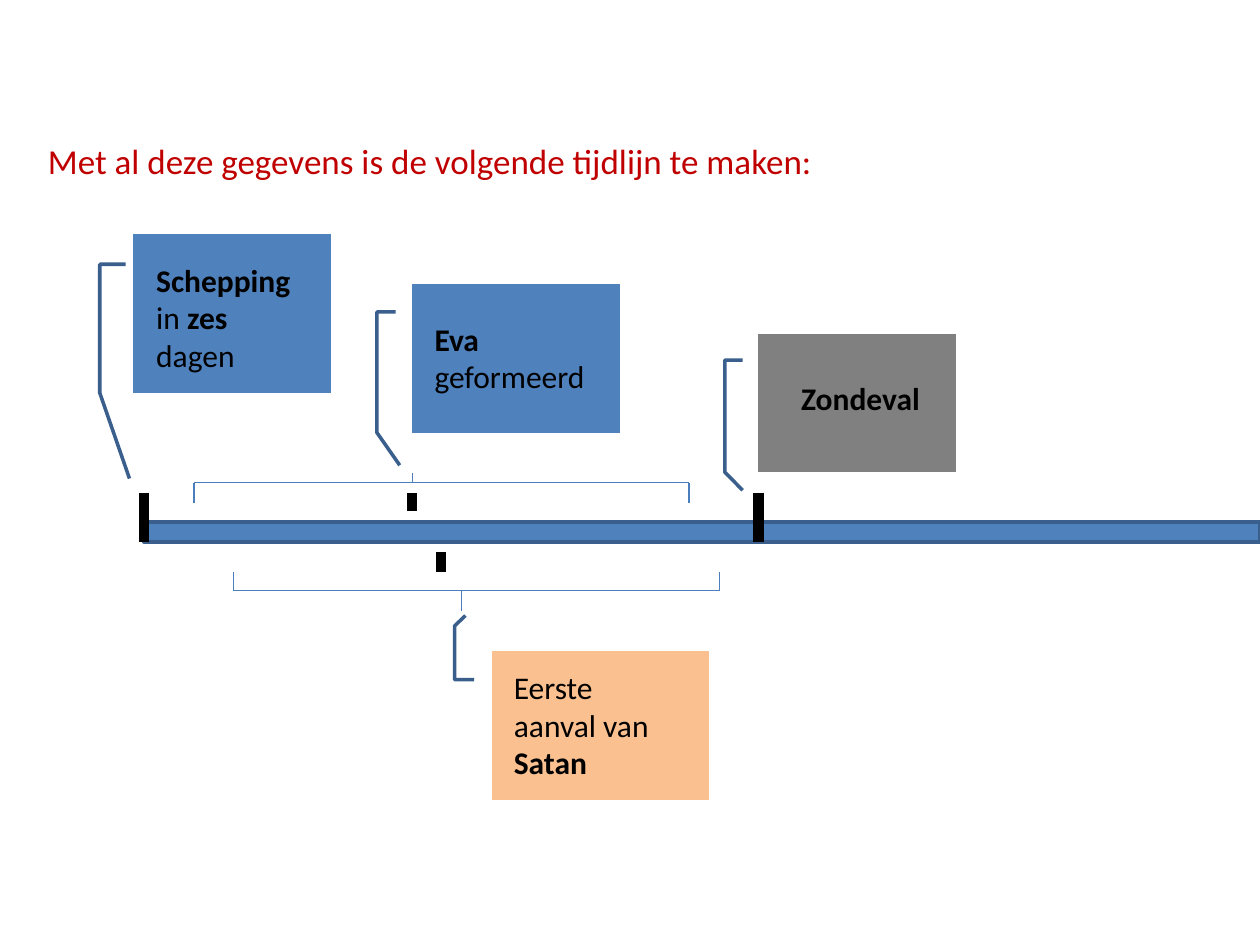
from lxml import etree
from pptx import Presentation
from pptx.dml.color import RGBColor
from pptx.enum import shapes, text
from pptx.oxml.ns import qn
from pptx.util import Cm, Pt

COLORS = {
    "title": "C00000",
    "ink": "000000",
    "event": "4F81BD",
    "outline": "3A5F8C",
    "bracket": "4B7EBC",
    "fall": "808080",
    "attack": "FAC090",
}


def color(name):
    return RGBColor.from_string(COLORS[name])


class TimelineSlide:
    """Holds the style and the current slide."""

    font = "Calibri"
    title_size = Pt(20)
    label_size = Pt(18)

    def __init__(self, prs):
        self.slide = prs.slides.add_slide(prs.slide_layouts[5])

    def style(self, paragraph, size, ink):
        paragraph.alignment = text.PP_ALIGN.LEFT
        paragraph.font.name = self.font
        paragraph.font.size = size
        paragraph.font.color.rgb = color(ink)

    def title(self, wording, box):
        heading = self.slide.shapes.title
        heading.left, heading.top, heading.width, heading.height = map(Cm, box)
        frame = heading.text_frame
        frame.text = wording
        frame.auto_size = text.MSO_AUTO_SIZE.NONE
        self.style(frame.paragraphs[0], self.title_size, "title")

    def shape(self, preset, box, fill):
        item = self.slide.shapes.add_shape(preset, *map(Cm, box))
        item.shadow.inherit = False
        item.fill.solid()
        item.fill.fore_color.rgb = color(fill)
        item.line.color.rgb = color("outline")
        item.line.width = Pt(2)
        return item

    def callout(self, box, fill, leader):
        """leader: y, x pairs as fractions of the box, from box to timeline."""
        preset = shapes.MSO_SHAPE.LINE_CALLOUT_3_NO_BORDER
        event = self.shape(preset, box, fill)
        for i, fraction in enumerate(leader):
            event.adjustments[i] = fraction

    def label(self, box, paragraphs):
        """paragraphs: lists of (wording, bold) runs."""
        frame = self.slide.shapes.add_textbox(*map(Cm, box)).text_frame
        frame.word_wrap = True
        for i, runs in enumerate(paragraphs):
            paragraph = frame.add_paragraph() if i else frame.paragraphs[0]
            self.style(paragraph, self.label_size, "ink")
            for wording, bold in runs:
                run = paragraph.add_run()
                run.text = wording
                run.font.bold = bold

    def line(self, x1, y1, x2, y2, ink, width):
        connector = self.slide.shapes.add_connector(
            shapes.MSO_CONNECTOR.STRAIGHT, Cm(x1), Cm(y1), Cm(x2), Cm(y2))
        connector.line.color.rgb = color(ink)
        connector.line.width = Pt(width)
        etree.SubElement(connector._element.spPr, qn("a:effectLst"))

    def tick(self, x, top, bottom):
        self.line(x, top, x, bottom, "ink", 6)

    def bracket(self, left, right, y, end_y, stem_x, stem_y):
        self.line(left, y, right, y, "bracket", 0.75)
        for x, y2 in ((left, end_y), (right, end_y), (stem_x, stem_y)):
            self.line(x, y, x, y2, "bracket", 0.75)


def main():
    prs = Presentation()
    prs.slide_width, prs.slide_height = Cm(25.4), Cm(19.05)
    timeline = TimelineSlide(prs)
    timeline.title("Met al deze gegevens is de volgende tijdlijn te maken:",
                   (0.71, 2.72, 24, 1.02))

    # Time bar, running off to the right edge
    creation_x, eve_x, fall_x, attack_x = 2.9, 8.31, 15.29, 8.89
    timeline.shape(shapes.MSO_SHAPE.RECTANGLE,
                   (creation_x, 10.52, 25.4 - creation_x, 0.41), "event")

    # Events: callout box, fill, leader, label box, label
    events = [
        ((2.69, 4.72, 3.99, 3.2), "event",
         (0.19, -0.04, 0.19, -0.17, 1, -0.17, 1.54, -0.02),
         (2.9, 5.13, 3.61, 2.57),
         [[("Schepping ", True), ("in ", False), ("zes ", True), ("dagen", False)]]),
        ((eve_x, 5.72, 4.19, 3), "event",
         (0.19, -0.08, 0.19, -0.17, 1, -0.17, 1.22, -0.06),
         (8.51, 6.32, 3.81, 1.8),
         [[("Eva", True)], [("geformeerd", False)]]),
        ((fall_x, 6.73, 3.99, 2.79), "fall",
         (0.19, -0.08, 0.19, -0.17, 1, -0.17, 1.13, -0.08),
         (15.9, 7.52, 3, 1.02),
         [[("Zondeval", True)]]),
        ((9.91, 13.13, 4.39, 3), "attack",
         (0.19, -0.08, 0.19, -0.17, -0.17, -0.17, -0.24, -0.12),
         (10.11, 13.34, 3.61, 2.57),
         [[("Eerste aanval van ", False), ("Satan", True)]]),
    ]
    for box, fill, leader, label_box, paragraphs in events:
        timeline.callout(box, fill, leader)
        timeline.label(label_box, paragraphs)

    # Marks on the time bar
    for x, top, bottom in ((creation_x, 9.93, 10.92), (eve_x, 9.93, 10.31),
                           (fall_x, 9.93, 10.92), (attack_x, 11.13, 11.53)):
        timeline.tick(x, top, bottom)

    # Possible periods for Eve (above) and the attack (below)
    timeline.bracket(3.91, 13.89, 9.73, 10.13, eve_x, 9.53)
    timeline.bracket(4.7, 14.5, 11.91, 11.53, 9.3, 12.32)

    prs.save("out.pptx")


if __name__ == "__main__":
    main()
